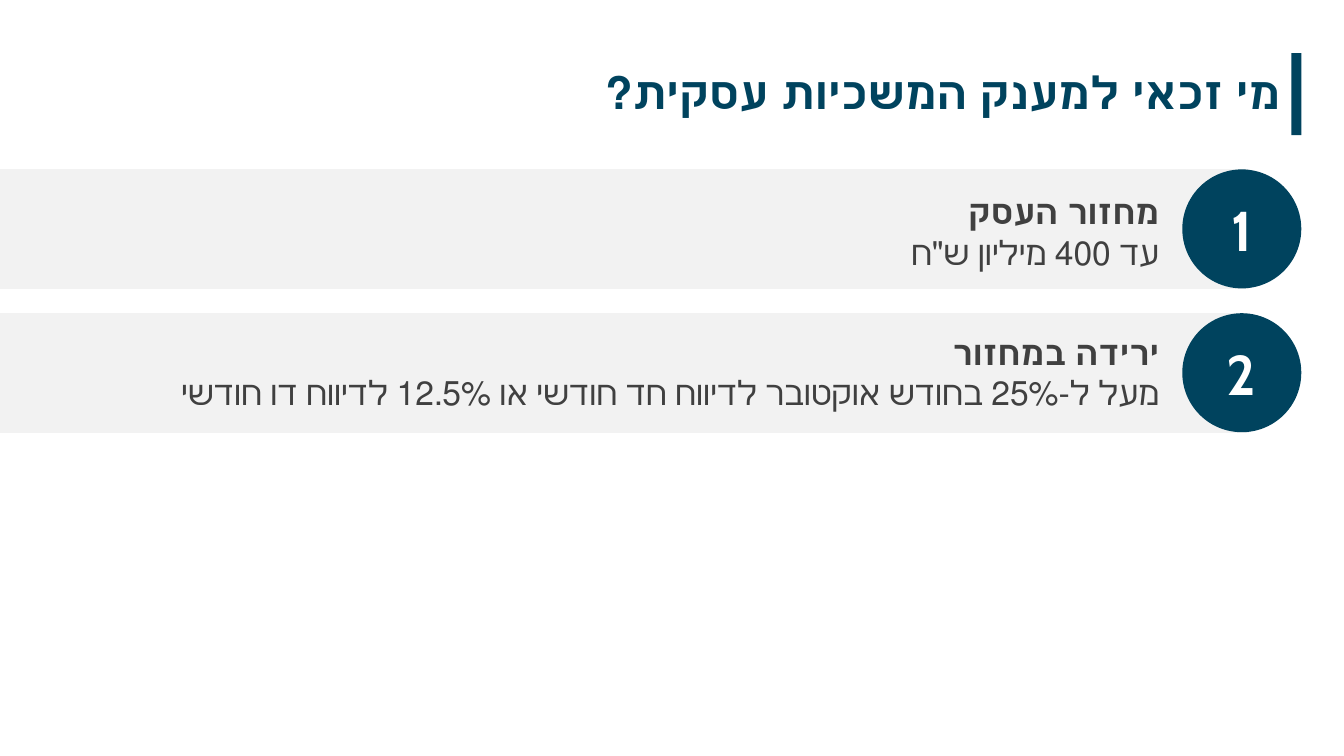
from dataclasses import dataclass

from pptx import Presentation
from pptx.dml.color import RGBColor as RGB
from pptx.enum.shapes import MSO_SHAPE as SHAPE
from pptx.enum.text import MSO_ANCHOR as ANCHOR, PP_ALIGN as ALIGN
from pptx.util import Pt


@dataclass(frozen=True)
class Theme:
    font: str = "Cabin"
    navy: RGB = RGB(0x00, 0x43, 0x5E)
    band: RGB = RGB(0xF2, 0xF2, 0xF2)
    body: RGB = RGB(0x40, 0x40, 0x40)
    white: RGB = RGB(0xFF, 0xFF, 0xFF)
    title_size: int = 32
    body_size: int = 24
    number_size: int = 40


class Deck:
    def __init__(self, theme):
        self.theme = theme
        self.prs = Presentation()
        self.prs.slide_width, self.prs.slide_height = Pt(960), Pt(540)
        self.slide = self.prs.slides.add_slide(self.prs.slide_layouts[6])

    def shape(self, kind, box, fill, outlined=False):
        s = self.slide.shapes.add_shape(kind, *map(Pt, box))
        s.shadow.inherit = False
        s.fill.solid()
        s.fill.fore_color.rgb = fill
        if outlined:
            s.line.color.rgb = fill
            s.line.width = Pt(1)
        else:
            s.line.fill.background()
        return s

    def run(self, p, text, size, color, bold=True):
        r = p.add_run()
        r.text = text
        r.font.name = self.theme.font
        r.font.size = Pt(size)
        r.font.bold = bold
        r.font.color.rgb = color

    def badge(self, box, number):
        s = self.shape(SHAPE.OVAL, box, self.theme.navy)
        tf = s.text_frame
        tf.vertical_anchor = ANCHOR.MIDDLE
        p = tf.paragraphs[0]
        p.alignment = ALIGN.CENTER
        self.run(p, str(number), self.theme.number_size, self.theme.white)

    def hebrew(self, box, lines, size, color):
        tf = self.slide.shapes.add_textbox(*map(Pt, box)).text_frame
        tf.word_wrap = True
        for i, text in enumerate(lines):
            p = tf.add_paragraph() if i else tf.paragraphs[0]
            p.alignment = ALIGN.RIGHT
            p._p.get_or_add_pPr().set("rtl", "1")
            self.run(p, text, size, color, bold=i == 0)


def main():
    theme = Theme()
    deck = Deck(theme)
    deck.hebrew((48, 42.5, 874, 46), ["מי זכאי למענק המשכיות עסקית?"],
                theme.title_size, theme.navy)
    deck.shape(SHAPE.RECTANGLE, (922.5, 38, 7, 58.5), theme.navy)

    criteria = [
        (133, "מחזור העסק", "עד 400 מיליון ש\"ח"),
        (233.5, "ירידה במחזור",
         "מעל ל-25% בחודש אוקטובר לדיווח חד חודשי או 12.5% לדיווח דו חודשי"),
    ]
    for i, (text_top, *lines) in enumerate(criteria):
        top = 121 + 102.75 * i
        deck.shape(SHAPE.RECTANGLE, (-2, top, 893.5, 85), theme.band, outlined=True)
        deck.hebrew((0, text_top, 835, 65.5), lines, theme.body_size, theme.body)
        deck.badge((844.5, top, 85, 85), i + 1)

    deck.prs.save("out.pptx")


if __name__ == "__main__":
    main()
